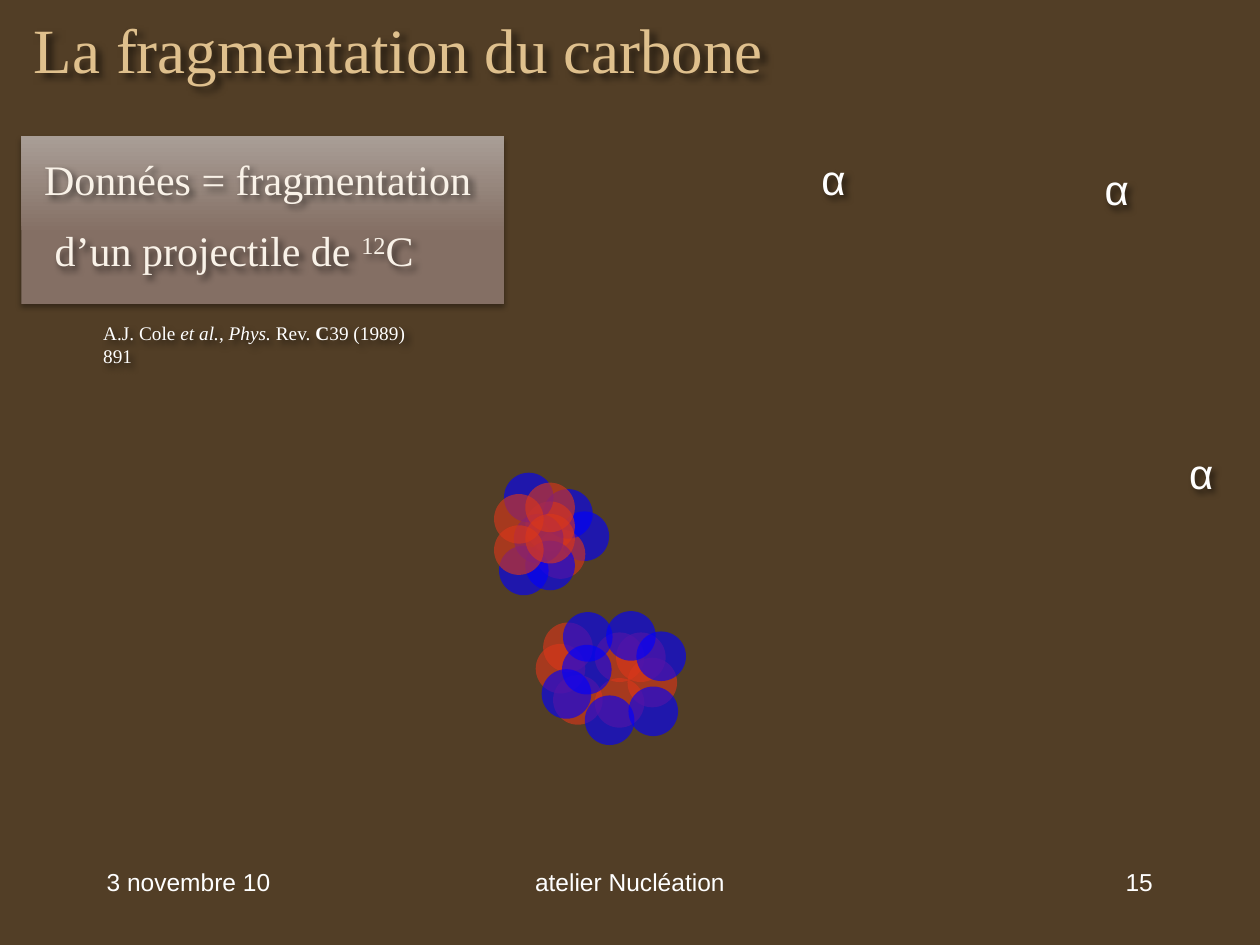
"""Build the slide on carbon fragmentation: two nuclei, alpha labels and the data source."""
from lxml import etree
from pptx import Presentation
from pptx.dml.color import RGBColor
from pptx.enum.shapes import MSO_SHAPE
from pptx.enum.text import MSO_ANCHOR, PP_ALIGN
from pptx.oxml.ns import qn
from pptx.util import Cm, Pt

OVAL, RECT = MSO_SHAPE.OVAL, MSO_SHAPE.RECTANGLE
MIDDLE = MSO_ANCHOR.MIDDLE
LEFT, CENTER, RIGHT = PP_ALIGN.LEFT, PP_ALIGN.CENTER, PP_ALIGN.RIGHT
BROWN = RGBColor(0x52, 0x3E, 0x26)
SAND = RGBColor(0xDF, 0xC0, 0x8D)
CREAM = RGBColor(0xF9, 0xF2, 0xE8)
WHITE = RGBColor(0xFF, 0xFF, 0xFF)
RED = RGBColor(0xDA, 0x36, 0x1A)
BLUE = RGBColor(0x00, 0x00, 0xFF)
TAUPE = RGBColor(0x84, 0x6F, 0x64)
PALE_TAUPE = RGBColor(0xA9, 0x9E, 0x96)
SERIF, SANS = "Times New Roman", "Arial"


def set_font(p, size, name, color):
    p.font.size = Pt(size)
    p.font.name = name
    p.font.color.rgb = color


def add_shadow(shape, blur, dist, angle, alpha):
    shape.shadow.inherit = False
    effects = shape._element.spPr.find(qn("a:effectLst"))
    outer = etree.SubElement(effects, qn("a:outerShdw"), blurRad=str(Pt(blur)), dist=str(Pt(dist)),
                             dir=str(angle * 60000), algn="tl", rotWithShape="0")
    black = etree.SubElement(outer, qn("a:srgbClr"), val="000000")
    etree.SubElement(black, qn("a:alpha"), val=str(alpha * 1000))


prs = Presentation()
prs.slide_width, prs.slide_height = Cm(25.4), Cm(19.05)
s = prs.slides.add_slide(prs.slide_layouts[5])
s.background.fill.solid()
s.background.fill.fore_color.rgb = BROWN

title = s.shapes.title
title.left, title.top, title.width, title.height = Cm(0.43), Cm(-0.2), Cm(25.4), Cm(2.34)
title.text_frame.vertical_anchor = MIDDLE
p = title.text_frame.paragraphs[0]
p.text = "La fragmentation du carbone"
p.alignment = LEFT
set_font(p, 36, SERIF, SAND)
add_shadow(title, 4, 3, 45, 60)

footers = [
    ("3 novembre 10", 1.9, 5.29, LEFT),
    ("atelier Nucléation", 8.68, 8.04, CENTER),
    ("15", 18.2, 5.29, RIGHT),
]
for text, left, width, alignment in footers:
    tf = s.shapes.add_textbox(Cm(left), Cm(17.35), Cm(width), Cm(1.27)).text_frame
    tf.word_wrap = True
    p = tf.paragraphs[0]
    p.text = text
    p.alignment = alignment
    set_font(p, 14, SANS, WHITE)

nucleon_groups = [
    [(RED, 10.8, 12.98), (RED, 10.95, 12.55), (RED, 11.15, 13.61), (RED, 11.99, 12.75),
     (RED, 11.99, 13.67), (RED, 12.65, 13.26), (RED, 12.42, 12.75), (BLUE, 11.33, 13),
     (BLUE, 11.35, 12.34), (BLUE, 11.79, 14.02), (BLUE, 12.22, 12.32), (BLUE, 12.67, 13.84),
     (BLUE, 12.83, 12.73), (BLUE, 10.92, 13.49)],
    [(BLUE, 11.28, 10.31), (RED, 10.8, 10.67), (BLUE, 10.95, 9.86), (RED, 10.59, 10.11)],
    [(BLUE, 10.16, 9.53), (BLUE, 10.36, 10.36), (RED, 9.96, 9.96), (RED, 10.59, 9.73)],
    [(BLUE, 10.59, 10.9), (BLUE, 10.06, 11), (RED, 10.59, 10.36), (RED, 9.96, 10.59)],
]
for nucleons in nucleon_groups:
    group = s.shapes.add_group_shape()
    for color, left, top in nucleons:
        sp = group.shapes.add_shape(OVAL, Cm(left), Cm(top), Cm(1), Cm(1))
        sp.shadow.inherit = False
        sp.line.fill.background()
        sp.fill.solid()
        sp.fill.fore_color.rgb = color
        srgb = sp._element.spPr.find(qn("a:solidFill"))[0]
        etree.SubElement(srgb, qn("a:alpha"), val="62000")

for left, top in [(16.31, 2.97), (23.72, 8.89), (22.02, 3.18)]:
    alpha = s.shapes.add_textbox(Cm(left), Cm(top), Cm(1.04), Cm(1.27))
    p = alpha.text_frame.paragraphs[0]
    p.text = "α"
    set_font(p, 24, SANS, WHITE)
    add_shadow(alpha, 4, 3, 45, 60)

panel = s.shapes.add_shape(RECT, Cm(0.43), Cm(2.75), Cm(9.74), Cm(3.38))
panel.line.fill.background()
panel.fill.gradient()
panel.fill.gradient_angle = 90
for stop, (position, color) in zip(panel.fill.gradient_stops, [(0.42, TAUPE), (1, PALE_TAUPE)]):
    stop.position = position
    stop.color.rgb = color
add_shadow(panel, 3.1, 1.8, 90, 35)

data = s.shapes.add_textbox(Cm(0.64), Cm(2.97), Cm(9.32), Cm(2.74))
tf = data.text_frame
tf.word_wrap = True
tf.paragraphs[0].text = "Données = fragmentation"
p = tf.add_paragraph()
for text in [" d’un projectile de ", "12", "C"]:
    r = p.add_run()
    r.text = text
    if text == "12":
        r._r.get_or_add_rPr().set("baseline", "30000")
for p in tf.paragraphs:
    p.space_after = Pt(12)
    set_font(p, 24, SERIF, CREAM)
add_shadow(data, 4, 3, 45, 60)

citation = s.shapes.add_textbox(Cm(1.83), Cm(6.35), Cm(6.91), Cm(0.74))
tf = citation.text_frame
tf.word_wrap = True
p = tf.paragraphs[0]
for text, italic, bold in [
    ("A.J. Cole ", False, False),
    ("et al.", True, False),
    (",", False, False),
    (" Phys. ", True, False),
    ("Rev. ", False, False),
    ("C", False, True),
    ("39 (1989) 891", False, False),
]:
    r = p.add_run()
    r.text = text
    r.font.italic = italic
    r.font.bold = bold
set_font(p, 11, SERIF, WHITE)
add_shadow(citation, 4, 3, 45, 60)

prs.save("out.pptx")
